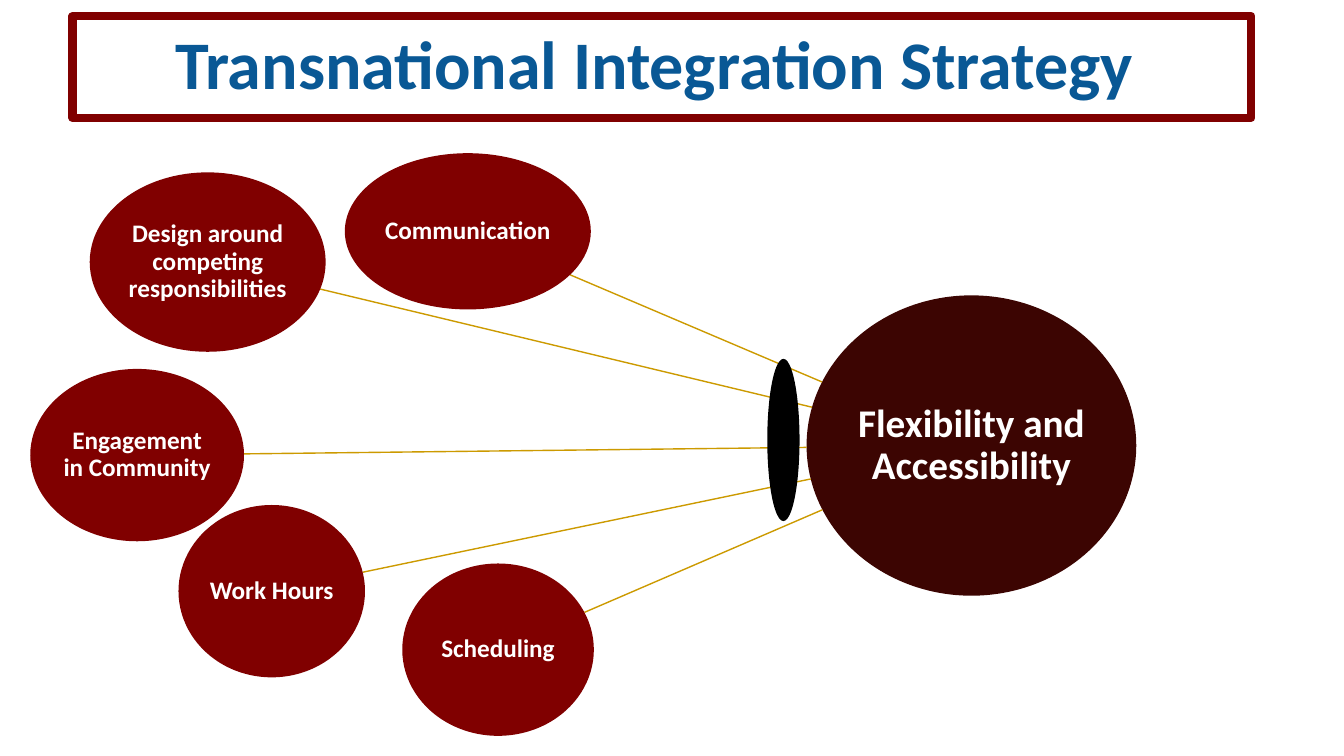
from math import hypot
from pptx import Presentation
from pptx.dml.color import RGBColor
from pptx.enum.shapes import MSO_CONNECTOR, MSO_SHAPE
from pptx.enum.text import MSO_ANCHOR, PP_ALIGN
from pptx.oxml.ns import qn
from pptx.util import Inches, Pt
from lxml.etree import SubElement

BLUE = RGBColor(0x09, 0x58, 0x95)
RED = RGBColor(0x80, 0x00, 0x00)
DARK = RGBColor(0x3C, 0x05, 0x02)
GOLD = RGBColor(0xCC, 0x9A, 0x00)
BLACK = RGBColor(0x00, 0x00, 0x00)
WHITE = RGBColor(0xFF, 0xFF, 0xFF)

TITLE = "Transnational Integration Strategy"
HUB = ("Flexibility and Accessibility", (8, 2.93, 3.27, 2.98))
TOPICS = [
    ("Design around competing responsibilities", (0.89, 1.71, 2.34, 1.78)),
    ("Communication", (3.42, 1.52, 2.44, 1.55)),
    ("Scheduling", (3.99, 5.59, 1.9, 1.71)),
    ("Work Hours", (1.77, 5.01, 1.85, 1.71)),
    ("Engagement in Community", (0.3, 3.66, 2.12, 1.71)),
]
LENS = (7.61, 3.56, 0.32, 1.61)


def write(frame, text, size, color):
    """Write one centred bold run into a text frame."""
    frame.word_wrap = True
    frame.vertical_anchor = MSO_ANCHOR.MIDDLE
    frame.margin_left = frame.margin_right = 0
    frame.margin_top = frame.margin_bottom = 0
    para = frame.paragraphs[0]
    para.alignment = PP_ALIGN.CENTER
    para.line_spacing = 0.9
    run = para.add_run()
    run.text = text
    font = run.font
    font.name, font.size, font.bold = "Calibri", Pt(size), True
    font.color.rgb = color


def add_oval(slide, box, color, kind=MSO_SHAPE.OVAL):
    """Add a solid round shape."""
    oval = slide.shapes.add_shape(kind, *map(Inches, box))
    oval.shadow.inherit = False
    oval.fill.solid()
    oval.fill.fore_color.rgb = color
    oval.line.fill.background()
    return oval


def center(box):
    """Return the middle of a box."""
    left, top, width, height = box
    return left + width / 2, top + height / 2


def edge(box, goal):
    """Return where the ray from an oval's middle to a goal leaves the oval."""
    x, y = center(box)
    dx, dy = goal[0] - x, goal[1] - y
    ratio = hypot(dx / (box[2] / 2), dy / (box[3] / 2))
    return x + dx / ratio, y + dy / ratio


def add_spoke(slide, box, hub):
    """Join a topic oval to the hub along the line of their middles."""
    ends = edge(hub, center(box)) + edge(box, center(hub))
    spoke = slide.shapes.add_connector(MSO_CONNECTOR.STRAIGHT, *map(Inches, ends))
    spoke.line.color.rgb = GOLD
    spoke.line.width = Pt(1)
    SubElement(spoke._element.spPr, qn("a:effectLst"))


def main():
    """Build the slide."""
    deck = Presentation()
    deck.slide_width, deck.slide_height = Inches(13.33), Inches(7.5)
    slide = deck.slides.add_slide(deck.slide_layouts[5])

    title = slide.shapes.title
    title.left, title.top = Inches(0.72), Inches(0.16)
    title.width, title.height = Inches(11.69), Inches(1.01)
    title.line.color.rgb = RED
    title.line.width = Pt(6)
    write(title.text_frame, TITLE, 48.6, BLUE)
    title.text_frame.margin_right = Inches(0.15)

    name, hub = HUB
    write(add_oval(slide, hub, DARK).text_frame, name, 28, WHITE)
    for name, box in TOPICS:
        add_spoke(slide, box, hub)
        write(add_oval(slide, box, RED).text_frame, name, 18, WHITE)
    add_oval(slide, LENS, BLACK, MSO_SHAPE.FLOWCHART_CONNECTOR)
    deck.save("out.pptx")


if __name__ == "__main__":
    main()
